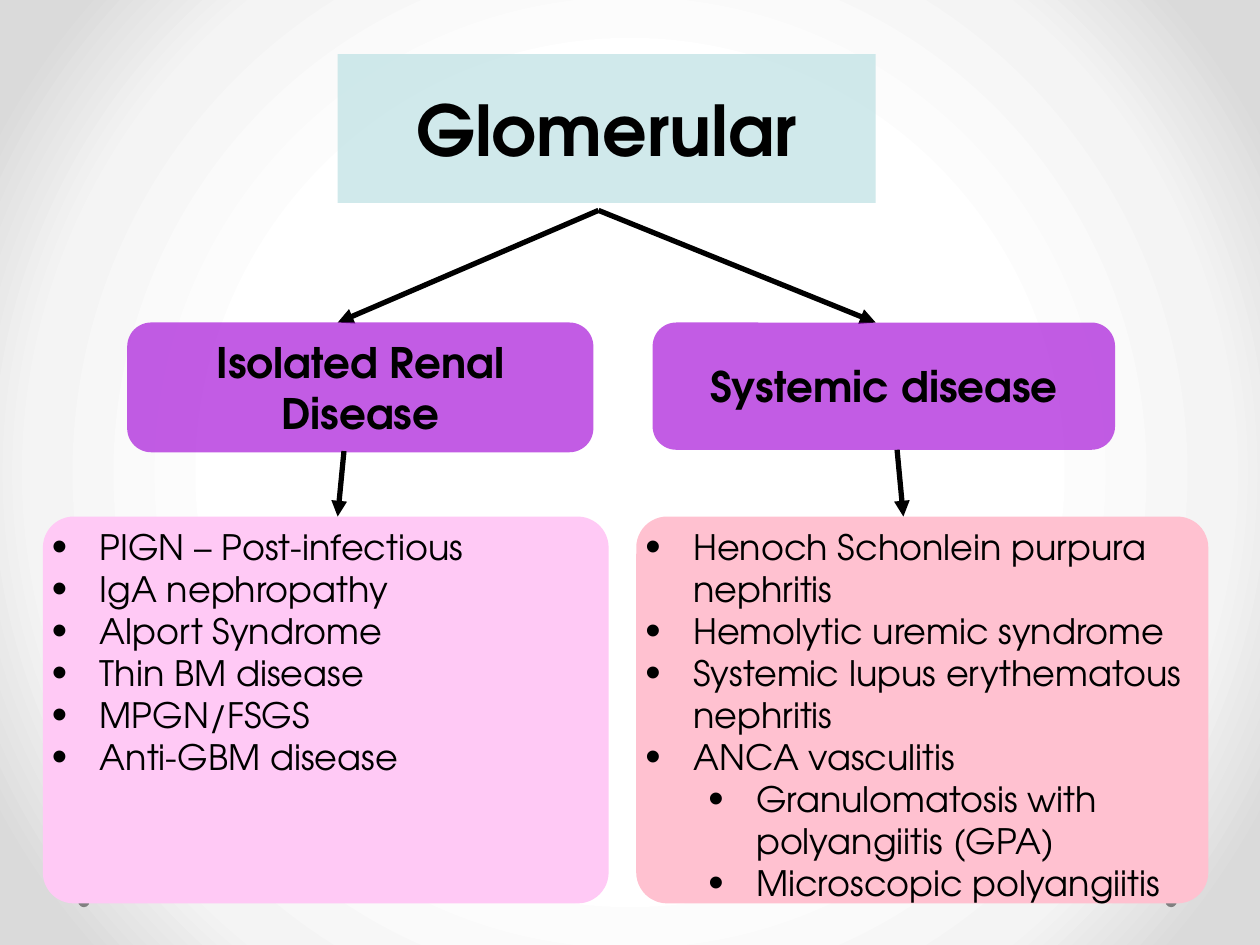
from dataclasses import dataclass

from pptx import Presentation
from pptx.dml.color import RGBColor as RGB
from pptx.enum.shapes import MSO_CONNECTOR as LINK, MSO_SHAPE as SHAPE
from pptx.enum.text import MSO_ANCHOR as ANCHOR, PP_ALIGN as ALIGN
from pptx.oxml import parse_xml
from pptx.oxml.ns import nsdecls, qn
from pptx.util import Inches, Pt


@dataclass(frozen=True)
class Theme:
    font: str = "TeX Gyre Adventor"
    ink: str = "000000"
    dot: str = "808080"
    title: str = "BBE0E3"
    head: str = "A714D9"
    left: str = "FFC9F5"
    right: str = "FFC1D0"
    stops: tuple = ((50, "FFFFFF"), (76, "F4F4F4"), (92, "DADADA"))
    big: int = 40
    mid: int = 24
    small: int = 20
    line: int = 3
    alpha: int = 69


def make(tag, inner="", **attrs):
    """Return one DrawingML element."""
    pairs = " ".join(f'{key}="{val}"' for key, val in attrs.items())
    return parse_xml(f'<a:{tag} {nsdecls("a")} {pairs}>{inner}</a:{tag}>')


def write(para, text, *, font, size, color, bold=False, align=ALIGN.LEFT):
    para.alignment = align
    run = para.add_run()
    run.text = text
    run.font.name = font
    run.font.size = Pt(size)
    run.font.bold = bold
    run.font.color.rgb = RGB.from_string(color)


class Page:
    def __init__(self, slide, theme):
        self.slide = slide
        self.theme = theme

    def back(self):
        self.slide.background.fill.solid()
        stops = "".join(
            f'<a:gs pos="{pos * 1000}"><a:srgbClr val="{color}"/></a:gs>'
            for pos, color in self.theme.stops)
        grad = make("gradFill",
                    f'<a:gsLst>{stops}</a:gsLst><a:path path="circle">'
                    '<a:fillToRect l="50000" t="50000" r="50000" b="50000"/>'
                    '</a:path>', rotWithShape=1)
        old = next(self.slide.element.iter(qn("a:solidFill")))
        old.getparent().replace(old, grad)

    def shape(self, kind, box, color, round_by=None, alpha=None):
        item = self.slide.shapes.add_shape(kind, *map(Inches, box))
        item.shadow.inherit = False
        item.line.fill.background()
        item.fill.solid()
        item.fill.fore_color.rgb = RGB.from_string(color)
        if round_by is not None:
            item.adjustments[0] = round_by
        if alpha is not None:
            tint = next(item.element.spPr.iter(qn("a:srgbClr")))
            tint.append(make("alpha", val=alpha * 1000))
        frame = item.text_frame
        frame.word_wrap = True
        frame.margin_left = frame.margin_right = 0
        frame.margin_top = frame.margin_bottom = 0
        return item

    def label(self, kind, box, text, color, size, round_by=None):
        look = self.theme
        item = self.shape(kind, box, color, round_by, look.alpha)
        frame = item.text_frame
        frame.vertical_anchor = ANCHOR.MIDDLE
        write(frame.paragraphs[0], text, font=look.font, size=size,
              color=look.ink, bold=True, align=ALIGN.CENTER)

    def bullets(self, box, color, rows):
        look = self.theme
        item = self.shape(SHAPE.ROUNDED_RECTANGLE, box, color, 0.08)
        frame = item.text_frame
        frame.vertical_anchor = ANCHOR.TOP
        for num, (level, text) in enumerate(rows):
            para = frame.add_paragraph() if num else frame.paragraphs[0]
            write(para, text, font=look.font, size=look.small, color=look.ink)
            para.level = level
            props = para._p.get_or_add_pPr()
            props.set("marL", str(Inches(0.38 + 0.5 * level)))
            props.set("indent", str(Inches(-0.38)))
            props.append(make("buClr", f'<a:srgbClr val="{look.ink}"/>'))
            props.append(make("buSzPct", val=125000))
            props.append(make("buFont", typeface="Arial"))
            props.append(make("buChar", char="•"))

    def arrow(self, start, end):
        link = self.slide.shapes.add_connector(
            LINK.STRAIGHT, *map(Inches, (*start, *end)))
        link.line.width = Pt(self.theme.line)
        link.line.color.rgb = RGB.from_string(self.theme.ink)
        link.line._get_or_add_ln().append(make("tailEnd", type="triangle"))
        link._element.spPr.append(make("effectLst"))


def main():
    deck = Presentation()
    deck.slide_width, deck.slide_height = Inches(10), Inches(7.5)
    look = Theme()
    page = Page(deck.slides.add_slide(deck.slide_layouts[6]), look)

    # Background and footer dots
    page.back()
    for x in (9.25, 0.62):
        page.shape(SHAPE.OVAL, (x, 7.11, 0.09, 0.09), look.dot)

    # Title and its two branches
    for x in (2.68, 6.95):
        page.arrow((4.75, 1.67), (x, 2.56))
    page.label(SHAPE.RECTANGLE, (2.68, 0.43, 4.27, 1.18), "Glomerular",
               look.title, look.big)

    # Disease groups
    for box, text in (((1.01, 2.56, 3.7, 1.03), "Isolated Renal Disease"),
                      ((5.18, 2.56, 3.67, 1.01), "Systemic disease")):
        page.label(SHAPE.ROUNDED_RECTANGLE, box, text, look.head, look.mid,
                   0.185)

    # Disease lists
    page.bullets((0.34, 4.1, 4.49, 3.07), look.left, [
        (0, "PIGN – Post-infectious"),
        (0, "IgA nephropathy"),
        (0, "Alport Syndrome"),
        (0, "Thin BM disease"),
        (0, "MPGN/FSGS"),
        (0, "Anti-GBM disease"),
    ])
    page.bullets((5.05, 4.1, 4.54, 3.07), look.right, [
        (0, "Henoch Schonlein purpura nephritis"),
        (0, "Hemolytic uremic syndrome"),
        (0, "Systemic lupus erythematous nephritis"),
        (0, "ANCA vasculitis"),
        (1, "Granulomatosis with polyangiitis (GPA)"),
        (1, "Microscopic polyangiitis"),
    ])

    # Arrows from groups to lists
    page.arrow((2.73, 3.58), (2.68, 4.1))
    page.arrow((7.12, 3.57), (7.17, 4.1))

    deck.save("out.pptx")


if __name__ == "__main__":
    main()
